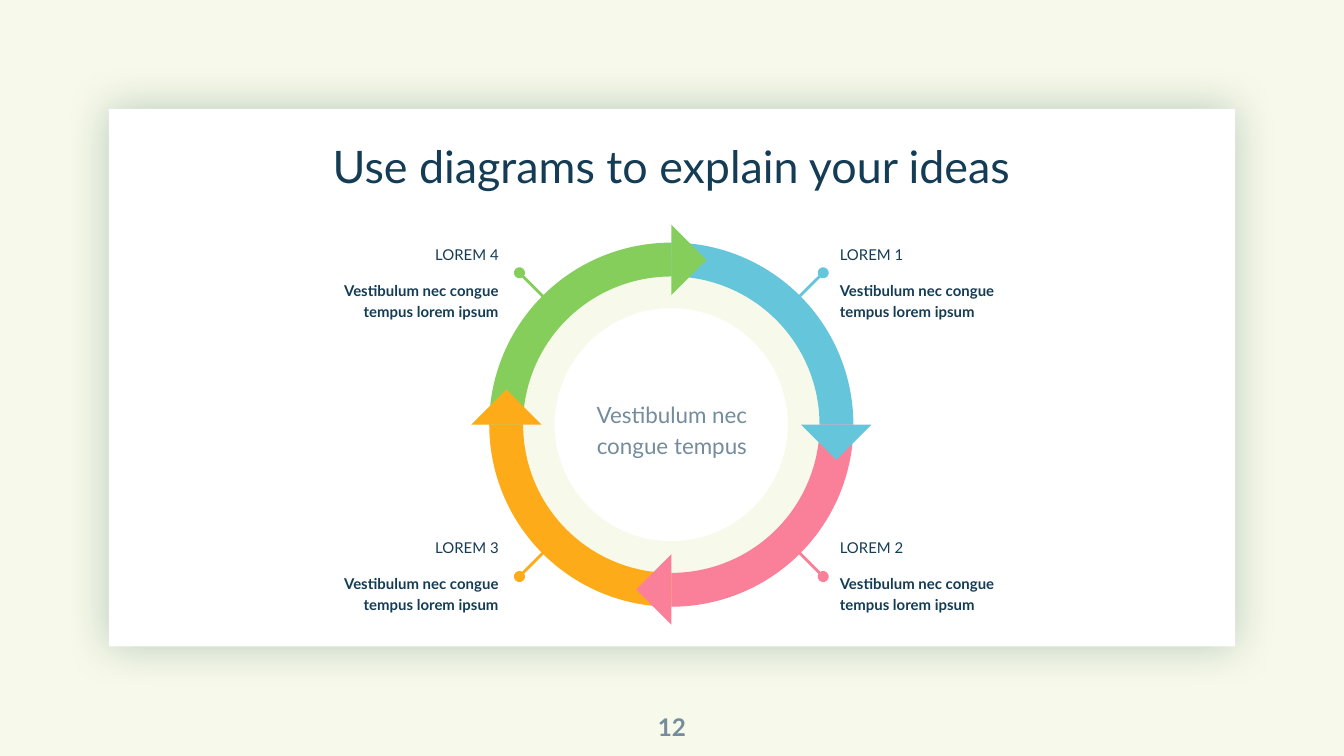
import math
import pptx
import pptx.util
import pptx.dml.color
import pptx.enum.shapes
import pptx.enum.text
import pptx.oxml

# Grid of square cells: 100 columns across, about 56 rows down
COLUMNS, ROWS = 100, 56.25
CELL = pptx.util.Inches(0.1)
CENTRE_X, CENTRE_Y = 49.95, 31.6

FONT = "Lato"
CREAM, WHITE, NAVY, SLATE = "F7F9EA", "FFFFFF", "143C55", "748C9C"
SHAPES = pptx.enum.shapes.MSO_SHAPE
ALIGN = pptx.enum.text.PP_ALIGN
ANCHOR = pptx.enum.text.MSO_ANCHOR
DRAWING = 'xmlns:a="http://schemas.openxmlformats.org/drawingml/2006/main"'

# Clockwise from the upper right: colour, side (x), level (y)
STEPS = [
    ("65C5DB", 1, -1),
    ("FA7F99", 1, 1),
    ("FEAB19", -1, 1),
    ("85CE5B", -1, -1),
]


def cells(*counts):
    return [round(count * CELL) for count in counts]


def paint(target, colour):
    target.solid()
    target.fore_color.rgb = pptx.dml.color.RGBColor.from_string(colour)


def add_figure(page, kind, place, colour, turn=0, adjust=()):
    figure = page.shapes.add_shape(kind, *cells(*place))
    figure.shadow.inherit = False
    paint(figure.fill, colour)
    figure.line.fill.background()
    figure.rotation = turn
    for index, value in enumerate(adjust):
        figure.adjustments[index] = value
    return figure


def add_centred(page, kind, x, y, size, colour, turn=0, adjust=()):
    place = (x - size / 2, y - size / 2, size, size)
    return add_figure(page, kind, place, colour, turn, adjust)


def add_text(page, place, paragraphs, size, colour, align=ALIGN.CENTER,
             anchor=ANCHOR.TOP, inset=0, spacing=1.0, gap=0):
    """Each paragraph is a (text, bold) pair; gap is the space between them."""
    box = page.shapes.add_textbox(*cells(*place))
    frame = box.text_frame
    frame.word_wrap = True
    frame.vertical_anchor = anchor
    frame.margin_left, frame.margin_top = cells(inset, inset)
    frame.margin_right, frame.margin_bottom = cells(inset, inset)
    for index, (text, bold) in enumerate(paragraphs):
        para = frame.add_paragraph() if index else frame.paragraphs[0]
        para.alignment = align
        para.line_spacing = spacing
        if index:
            para.space_before = pptx.util.Pt(gap)
        span = para.add_run()
        span.text = text
        span.font.name = FONT
        span.font.size = pptx.util.Pt(size)
        span.font.bold = bold
        paint(span.font.fill, colour)


def add_card(page):
    card = add_figure(page, SHAPES.RECTANGLE, (8.1, 8.1, 83.8, 40), WHITE)
    effects = card._element.spPr.find(pptx.oxml.ns.qn("a:effectLst"))
    effects.append(pptx.oxml.parse_xml(
        f'<a:outerShdw {DRAWING} blurRad="{pptx.util.Pt(22.5)}" dist="0" '
        'algn="ctr" rotWithShape="0"><a:srgbClr val="054C3A">'
        '<a:alpha val="25000"/></a:srgbClr></a:outerShdw>'))


def add_pointer(page, colour, side, level):
    outer, inner = 11.3, 7.9
    pointer = page.shapes.add_connector(
        pptx.enum.shapes.MSO_CONNECTOR.STRAIGHT,
        *cells(CENTRE_X + side * outer, CENTRE_Y + level * outer,
               CENTRE_X + side * inner, CENTRE_Y + level * inner))
    paint(pointer.line.fill, colour)
    pointer.line.width = pptx.util.Pt(1.5)
    pointer.line._get_or_add_ln().append(
        pptx.oxml.parse_xml(f'<a:headEnd {DRAWING} type="oval"/>'))
    pointer._element.spPr.append(
        pptx.oxml.parse_xml(f"<a:effectLst {DRAWING}/>"))


def add_label(page, number, side, level):
    left = 61.5 if side > 0 else 23
    top = 38.9 if level > 0 else 17.1
    add_text(page, (left, top, 15.1, 6.8),
             [(f"LOREM {number}", False),
              ("Vestibulum nec congue tempus lorem ipsum", True)],
             8, NAVY, ALIGN.LEFT if side > 0 else ALIGN.RIGHT,
             inset=1, spacing=1.15, gap=8.3)


def add_quarter(page, index, colour):
    # Arc angles are 60000ths of a degree, adjustments are 100000ths
    adjust = (240 * 0.6, 330 * 0.6, 0.093)
    add_centred(page, SHAPES.BLOCK_ARC, CENTRE_X, CENTRE_Y, 27.1, colour,
                30 + 90 * index, adjust)


def add_arrowhead(page, index, colour):
    radius, angle = 12.27, math.radians(90 * index)
    add_centred(page, SHAPES.RIGHT_TRIANGLE,
                CENTRE_X + radius * math.cos(angle),
                CENTRE_Y + radius * math.sin(angle),
                3.7, colour, (315 + 90 * index) % 360)


def main():
    deck = pptx.Presentation()
    deck.slide_width, deck.slide_height = cells(COLUMNS, ROWS)
    page = deck.slides.add_slide(deck.slide_layouts[6])
    paint(page.background.fill, CREAM)

    # Card, title and page number
    add_card(page)
    add_text(page, (11.8, 10.7, 76.3, 3.7),
             [("Use diagrams to explain your ideas", False)], 24, NAVY,
             anchor=ANCHOR.BOTTOM, spacing=0.9)
    add_text(page, (47, 51.9, 6, 4.3), [("12", True)], 13, SLATE,
             anchor=ANCHOR.MIDDLE)

    # Pale ring with the central text
    add_centred(page, SHAPES.DONUT, CENTRE_X, CENTRE_Y, 25.6, CREAM,
                adjust=(0.161,))
    add_text(page, (42.7, 27.8, 14.6, 8.1),
             [("Vestibulum nec congue tempus", False)], 12, SLATE,
             anchor=ANCHOR.MIDDLE, inset=1, spacing=1.15)

    # Four steps, then the arrowheads over the joints
    for index, (colour, side, level) in enumerate(STEPS):
        add_pointer(page, colour, side, level)
        add_label(page, index + 1, side, level)
        add_quarter(page, index, colour)
    for index, (colour, _, _) in enumerate(STEPS):
        add_arrowhead(page, index, colour)

    deck.save("out.pptx")


if __name__ == "__main__":
    main()
